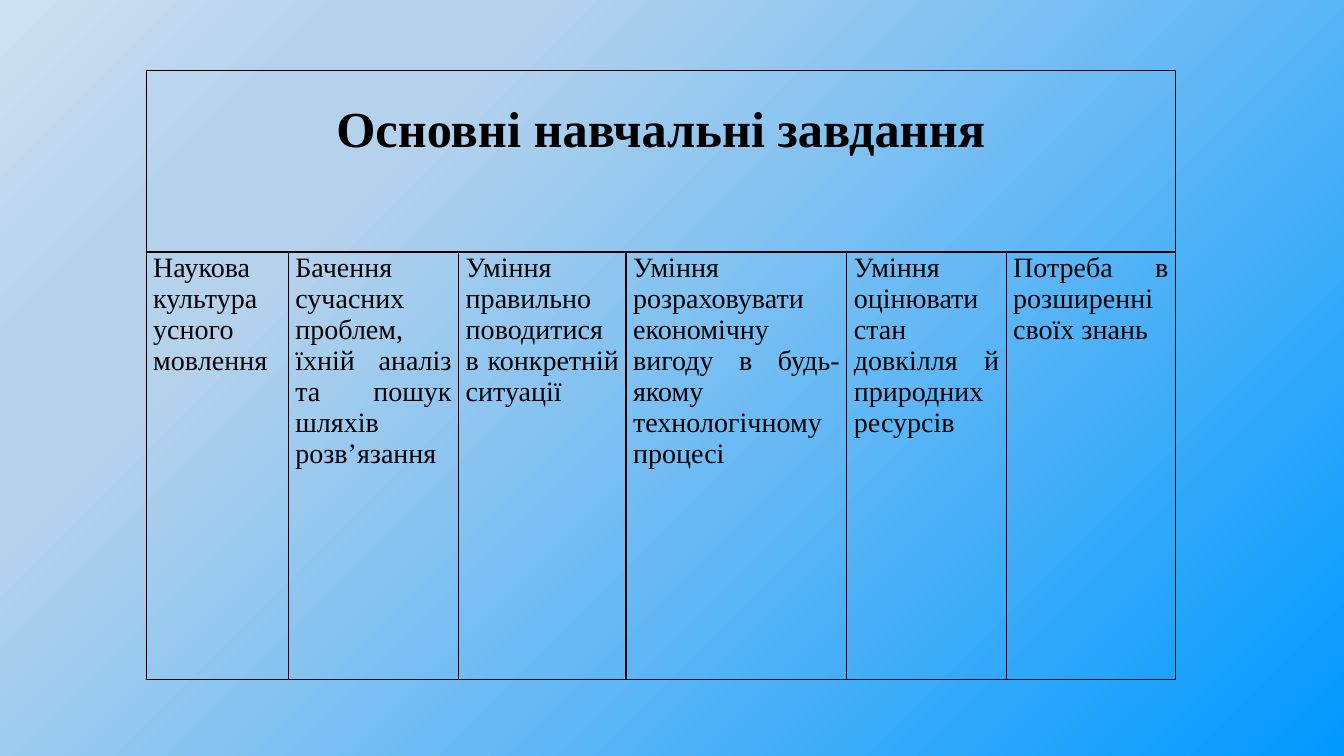
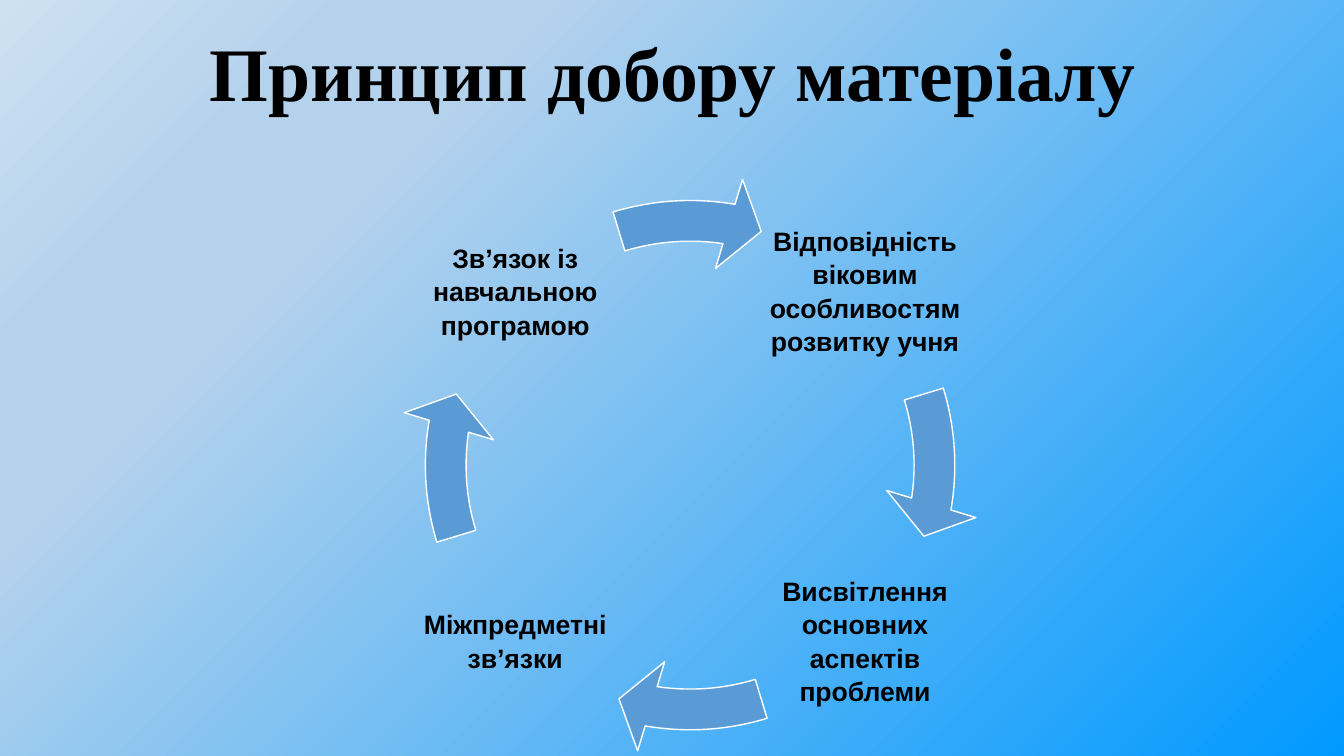
from dataclasses import dataclass

import pptx
import pptx.dml.color
import pptx.enum.shapes
import pptx.enum.text
import pptx.oxml
import pptx.oxml.ns
import pptx.util
from pptx.util import Inches

ALIGN = pptx.enum.text.PP_ALIGN
ANCHOR = pptx.enum.text.MSO_ANCHOR

# Shared look
INK = "000000"
ARROW_FILL = "5B9BD5"
ARROW_EDGE = "FFFFFF"
SERIF = "Times New Roman"
SANS = "Arial"
BACKDROP_STOPS = [(0, "0099FF"), (74, "B5D2EC"), (83, "B5D2EC"), (100, "CEE1F2")]
BACKDROP_ANGLE = 135  # counter-clockwise, from the lower right corner

# Learning tasks table
TASKS_TITLE = "Основні навчальні завдання"
ROW_HEIGHTS = (1.8, 4.24)


@dataclass(frozen=True)
class Task:
    text: str
    width: float


TASKS = [
    Task("Наукова культура усного мовлення", 1.41),
    Task("Бачення сучасних проблем, їхній аналіз та пошук шляхів розв’язання", 1.69),
    Task("Уміння правильно поводитися в конкретній ситуації", 1.66),
    Task("Уміння розраховувати економічну вигоду в будь-якому технологічному процесі", 2.19),
    Task("Уміння оцінювати стан довкілля й природних ресурсів", 1.58),
    Task("Потреба в розширенні своїх знань", 1.68),
]

# Selection principles cycle, clockwise from the upper right
LEFT, RIGHT, UPPER, LOWER = 4.09, 7.56, 1.86, 5.33
LABEL_SIZE = 2.04
RING_LEFT, RING_TOP, RING_SIZE = 3.96, 1.73, 5.77
FULL_TURN, QUARTER_TURN = 216, 54  # angles in units of 100000/60000 degree


@dataclass(frozen=True)
class Principle:
    text: str
    left: float
    top: float


PRINCIPLES = [
    Principle("Відповідність віковим особливостям розвитку учня", RIGHT, UPPER),
    Principle("Висвітлення основних аспектів проблеми", RIGHT, LOWER),
    Principle("Міжпредметні зв’язки", LEFT, LOWER),
    Principle("Зв’язок із навчальною програмою", LEFT, UPPER),
]


def colour(value: str) -> pptx.dml.color.RGBColor:
    return pptx.dml.color.RGBColor.from_string(value)


def write(frame, text: str, *, size: float, font: str = SERIF, bold: bool = False,
          align=ALIGN.CENTER, spacing: float = 1.0) -> None:
    frame.word_wrap = True
    paragraph = frame.paragraphs[0]
    paragraph.alignment = align
    paragraph.line_spacing = spacing
    run = paragraph.add_run()
    run.text = text
    run.font.size = pptx.util.Pt(size)
    run.font.name = font
    run.font.bold = bold
    run.font.color.rgb = colour(INK)


def add_label(slide, text: str, left: float, top: float, width: float, height: float, *,
              anchor, inset: tuple[float, float] = (0.1, 0.05), **text_format) -> None:
    frame = slide.shapes.add_textbox(
        Inches(left), Inches(top), Inches(width), Inches(height)).text_frame
    frame.vertical_anchor = anchor
    frame.margin_left = frame.margin_right = Inches(inset[0])
    frame.margin_top = frame.margin_bottom = Inches(inset[1])
    write(frame, text, **text_format)


def paint_backdrop(master) -> None:
    fill = master.background.fill
    fill.gradient()
    fill.gradient_angle = BACKDROP_ANGLE
    stop_list = master.element.find(".//" + pptx.oxml.ns.qn("p:bgPr")).find(
        ".//" + pptx.oxml.ns.qn("a:gsLst"))
    for stop in list(stop_list):
        stop_list.remove(stop)
    for percent, value in BACKDROP_STOPS:
        stop_list.append(pptx.oxml.parse_xml(
            f'<a:gs {pptx.oxml.ns.nsdecls("a")} pos="{percent * 1000}">'
            f'<a:srgbClr val="{value}"/></a:gs>'))


def style_cell(cell, *, top_margin: float = 0) -> None:
    cell.margin_left = cell.margin_right = Inches(0.07)
    cell.margin_top, cell.margin_bottom = Inches(top_margin), 0
    cell.vertical_anchor = ANCHOR.TOP
    cell.fill.background()
    properties = cell._tc.get_or_add_tcPr()
    for index, side in enumerate("LRTB"):
        properties.insert(index, pptx.oxml.parse_xml(
            f'<a:ln{side} {pptx.oxml.ns.nsdecls("a")} w="12700">'
            f'<a:solidFill><a:srgbClr val="{INK}"/></a:solidFill></a:ln{side}>'))


def build_tasks(slide) -> None:
    frame = slide.shapes.add_table(
        len(ROW_HEIGHTS), len(TASKS), Inches(1.45), Inches(0.7),
        Inches(sum(task.width for task in TASKS)), Inches(sum(ROW_HEIGHTS)))
    table = frame.table
    table.first_row = table.horz_banding = False
    for row, height in zip(table.rows, ROW_HEIGHTS):
        row.height = Inches(height)

    # Heading across all columns, tasks below
    heading = table.cell(0, 0)
    heading.merge(table.cell(0, len(TASKS) - 1))
    write(heading.text_frame, TASKS_TITLE, size=36, bold=True)
    for index, task in enumerate(TASKS):
        table.columns[index].width = Inches(task.width)
        style_cell(table.cell(0, index), top_margin=0.32)
        task_cell = table.cell(1, index)
        style_cell(task_cell)
        write(task_cell.text_frame, task.text, size=20, align=ALIGN.JUSTIFY)


def add_cycle_arrow(slide, step: int) -> None:
    arrow = slide.shapes.add_shape(
        pptx.enum.shapes.MSO_SHAPE.CIRCULAR_ARROW,
        Inches(RING_LEFT), Inches(RING_TOP), Inches(RING_SIZE), Inches(RING_SIZE))
    arrow.shadow.inherit = False
    arrow.fill.solid()
    arrow.fill.fore_color.rgb = colour(ARROW_FILL)
    arrow.line.color.rgb = colour(ARROW_EDGE)
    arrow.line.width = pptx.util.Pt(1)
    turn = step * QUARTER_TURN
    geometry = (0.07, 4.65, 5.5 + turn, (205.85 + turn) % FULL_TURN, 0.08)
    for index, value in enumerate(geometry):
        arrow.adjustments[index] = value


def build_principles(slide) -> None:
    add_label(slide, "Принцип добору матеріалу", 1.67, 0.42, 10, 0.8,
              anchor=ANCHOR.BOTTOM, size=54, bold=True, spacing=0.9)
    for step, principle in enumerate(PRINCIPLES):
        add_label(slide, principle.text, principle.left, principle.top,
                  LABEL_SIZE, LABEL_SIZE, anchor=ANCHOR.MIDDLE, inset=(0.03, 0.03),
                  size=19, font=SANS, bold=True, spacing=1.05)
        add_cycle_arrow(slide, step)


def main() -> None:
    deck = pptx.Presentation()
    deck.slide_width, deck.slide_height = Inches(13.33), Inches(7.5)
    paint_backdrop(deck.slide_master)
    blank = deck.slide_layouts[6]
    for build in (build_tasks, build_principles):
        build(deck.slides.add_slide(blank))
    deck.save("out.pptx")


if __name__ == "__main__":
    main()
